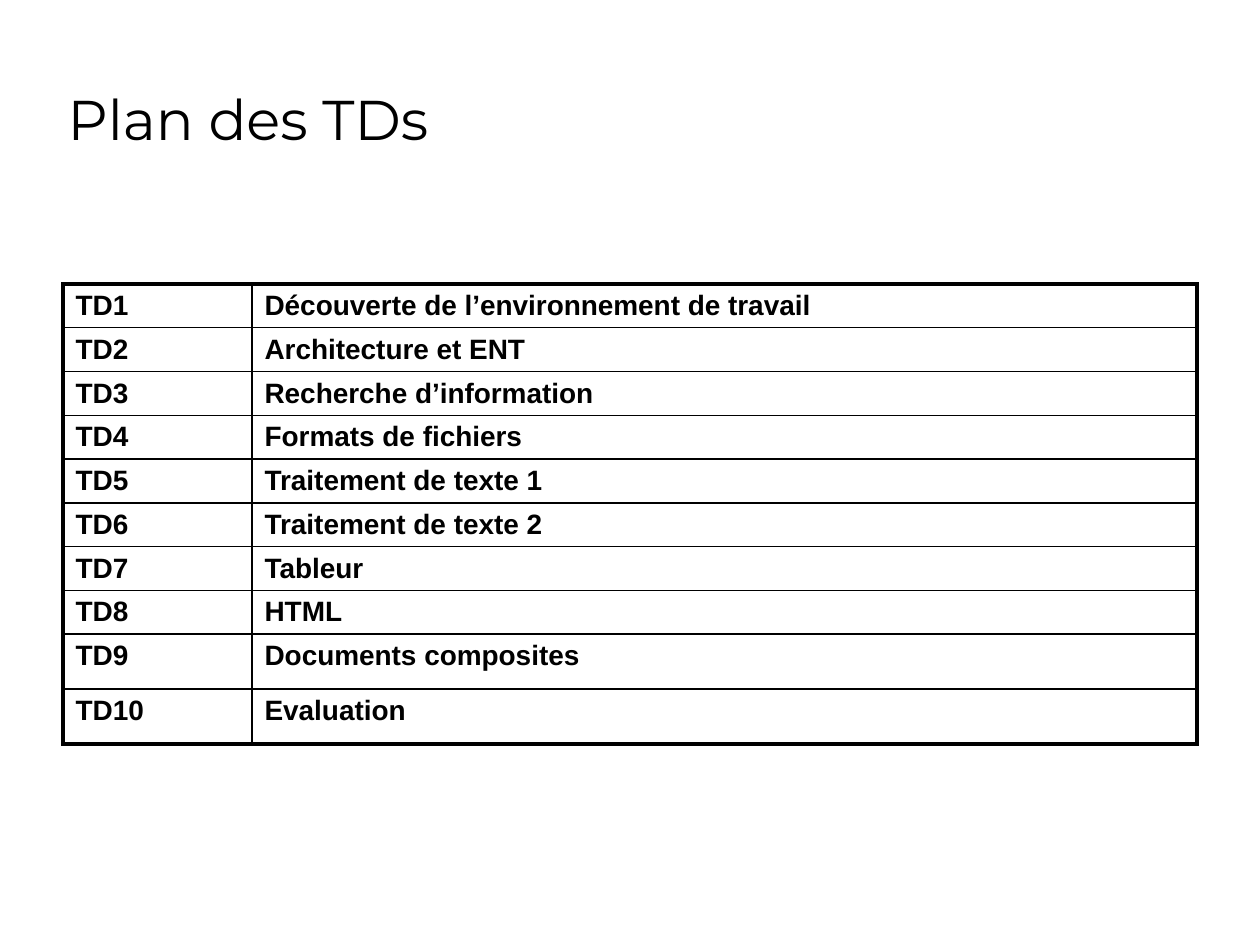
from dataclasses import dataclass

from lxml.etree import SubElement
from pptx import Presentation
from pptx.dml.color import RGBColor
from pptx.enum.text import MSO_ANCHOR as Anchor, MSO_AUTO_SIZE as AutoSize, PP_ALIGN as Align
from pptx.oxml.ns import qn
from pptx.slide import Slide
from pptx.util import Emu, Pt

BLACK = RGBColor(0, 0, 0)
SCALE = 914400 / 126
SESSIONS = [
    "Découverte de l’environnement de travail",
    "Architecture et ENT",
    "Recherche d’information",
    "Formats de fichiers",
    "Traitement de texte 1",
    "Traitement de texte 2",
    "Tableur",
    "HTML",
    "Documents composites",
    "Evaluation",
]


def px(length):
    return Emu(round(length * SCALE))


@dataclass
class Page:
    """Style and current slide, with one method for each kind of element."""

    slide: Slide
    title_font: str = "Montserrat"
    table_font: str = "Arial"
    ink: RGBColor = BLACK
    outer: float = 2.25
    inner: float = 1

    def add_text(self, paragraph, text, font, size, bold=False):
        run = paragraph.add_run()
        run.text = text
        run.font.name = font
        run.font.size = Pt(size)
        run.font.bold = bold
        run.font.color.rgb = self.ink

    def title(self, text, left, top, width, height):
        heading = self.slide.shapes.title
        heading.left, heading.top = px(left), px(top)
        heading.width, heading.height = px(width), px(height)
        frame = heading.text_frame
        frame.word_wrap = True
        frame.auto_size = AutoSize.NONE
        frame.vertical_anchor = Anchor.BOTTOM
        frame.paragraphs[0].alignment = Align.LEFT
        self.add_text(frame.paragraphs[0], text, self.title_font, 32)

    def border(self, cell, side, width):
        line = SubElement(cell._tc.get_or_add_tcPr(), qn(f"a:ln{side}"), w=str(Pt(width)))
        fill = SubElement(line, qn("a:solidFill"))
        SubElement(fill, qn("a:srgbClr"), val=str(self.ink))

    def table(self, rows, left, top, widths, heights):
        size = px(sum(widths)), px(sum(heights))
        plan = self.slide.shapes.add_table(len(rows), len(widths), px(left), px(top), *size).table
        plan.first_row = plan.horz_banding = False
        for column, width in zip(plan.columns, widths):
            column.width = px(width)
        last_row, last_column = len(rows) - 1, len(widths) - 1
        for r, (texts, height) in enumerate(zip(rows, heights)):
            plan.rows[r].height = px(height)
            for c, text in enumerate(texts):
                cell = plan.cell(r, c)
                edges = {"L": c == 0, "R": c == last_column, "T": r == 0, "B": r == last_row}
                for side, is_outer in edges.items():
                    self.border(cell, side, self.outer if is_outer else self.inner)
                cell.fill.background()
                cell.vertical_anchor = Anchor.TOP
                self.add_text(cell.text_frame.paragraphs[0], text, self.table_font, 16, True)


def main():
    deck = Presentation()
    deck.slide_width, deck.slide_height = px(1260), px(945)
    page = Page(deck.slides.add_slide(deck.slide_layouts[5]))
    page.title("Plan des TDs", 55, 32, 1071, 126)
    rows = [(f"TD{number}", topic) for number, topic in enumerate(SESSIONS, 1)]
    page.table(rows, 63, 284, [189, 945], [43] * 8 + [55] * 2)
    deck.save("out.pptx")


if __name__ == "__main__":
    main()
